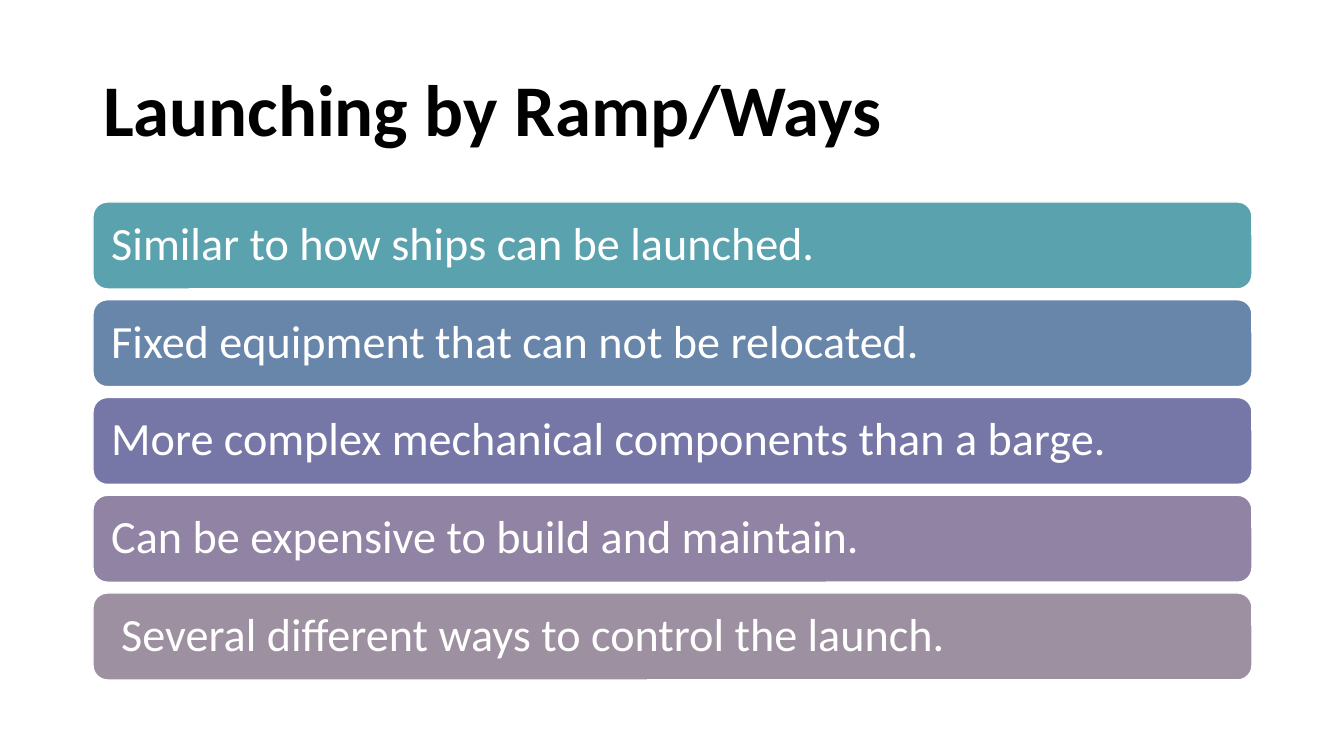
import pptx
import pptx.dml.color
import pptx.enum.shapes
import pptx.enum.text
import pptx.util

RGBColor = pptx.dml.color.RGBColor
BLACK = RGBColor(0x00, 0x00, 0x00)
WHITE = RGBColor(0xFF, 0xFF, 0xFF)
TEAL = RGBColor(0x5A, 0xA2, 0xAE)
BLUE = RGBColor(0x68, 0x85, 0xAA)
INDIGO = RGBColor(0x76, 0x77, 0xA6)
PURPLE = RGBColor(0x90, 0x83, 0xA3)
MAUVE = RGBColor(0x9D, 0x90, 0xA0)

# Content: text, bar colour, extra indent in px
TITLE = "Launching by Ramp/Ways"
POINTS = [
    ("Similar to how ships can be launched.", TEAL, 0),
    ("Fixed equipment that can not be relocated.", BLUE, 0),
    ("More complex mechanical components than a barge.", INDIGO, 0),
    ("Can be expensive to build and maintain.", PURPLE, 0),
    ("Several different ways to control the launch.", MAUVE, 10),
]

# Layout in px
FONT = "Calibri"
SLIDE_WIDTH, SLIDE_HEIGHT = 1344, 756
LEFT, WIDTH = 93, 1159
TITLE_TOP, TITLE_HEIGHT = 40, 146
BARS_TOP, BARS_BOTTOM, BAR_HEIGHT = 202, 680, 87
BAR_INSET = 14
BAR_STEP = (BARS_BOTTOM - BARS_TOP - BAR_HEIGHT) / (len(POINTS) - 1)


def px(length):
    return pptx.util.Emu(round(length * 914400 / 100.8))


def write(shape, text, size, color, bold=False):
    frame = shape.text_frame
    frame.text = text
    frame.word_wrap = True
    frame.auto_size = pptx.enum.text.MSO_AUTO_SIZE.NONE
    frame.vertical_anchor = pptx.enum.text.MSO_ANCHOR.MIDDLE
    para = frame.paragraphs[0]
    para.alignment = pptx.enum.text.PP_ALIGN.LEFT
    para.line_spacing = 0.9
    para.space_before = pptx.util.Pt(0)
    font = para.runs[0].font
    font.name = FONT
    font.size = pptx.util.Pt(size)
    font.bold = bold
    font.color.rgb = color


def add_bar(page, top, text, color, indent):
    bar = page.shapes.add_shape(
        pptx.enum.shapes.MSO_SHAPE.ROUNDED_RECTANGLE,
        px(LEFT), px(top), px(WIDTH), px(BAR_HEIGHT))
    bar.shadow.inherit = False
    bar.fill.solid()
    bar.fill.fore_color.rgb = color
    bar.line.color.rgb = WHITE
    bar.line.width = pptx.util.Pt(1)
    write(bar, text, 33, WHITE)
    frame = bar.text_frame
    frame.margin_left = px(BAR_INSET + indent)
    frame.margin_right = frame.margin_top = frame.margin_bottom = px(BAR_INSET)


def main():
    deck = pptx.Presentation()
    deck.slide_width, deck.slide_height = px(SLIDE_WIDTH), px(SLIDE_HEIGHT)
    page = deck.slides.add_slide(deck.slide_layouts.get_by_name("Title Only"))

    # Title
    title = page.shapes.title
    title.left, title.top = px(LEFT), px(TITLE_TOP)
    title.width, title.height = px(WIDTH), px(TITLE_HEIGHT)
    write(title, TITLE, 52, BLACK, bold=True)

    # Stacked bars
    for index, (text, color, indent) in enumerate(POINTS):
        add_bar(page, BARS_TOP + index * BAR_STEP, text, color, indent)

    deck.save("out.pptx")


if __name__ == "__main__":
    main()
